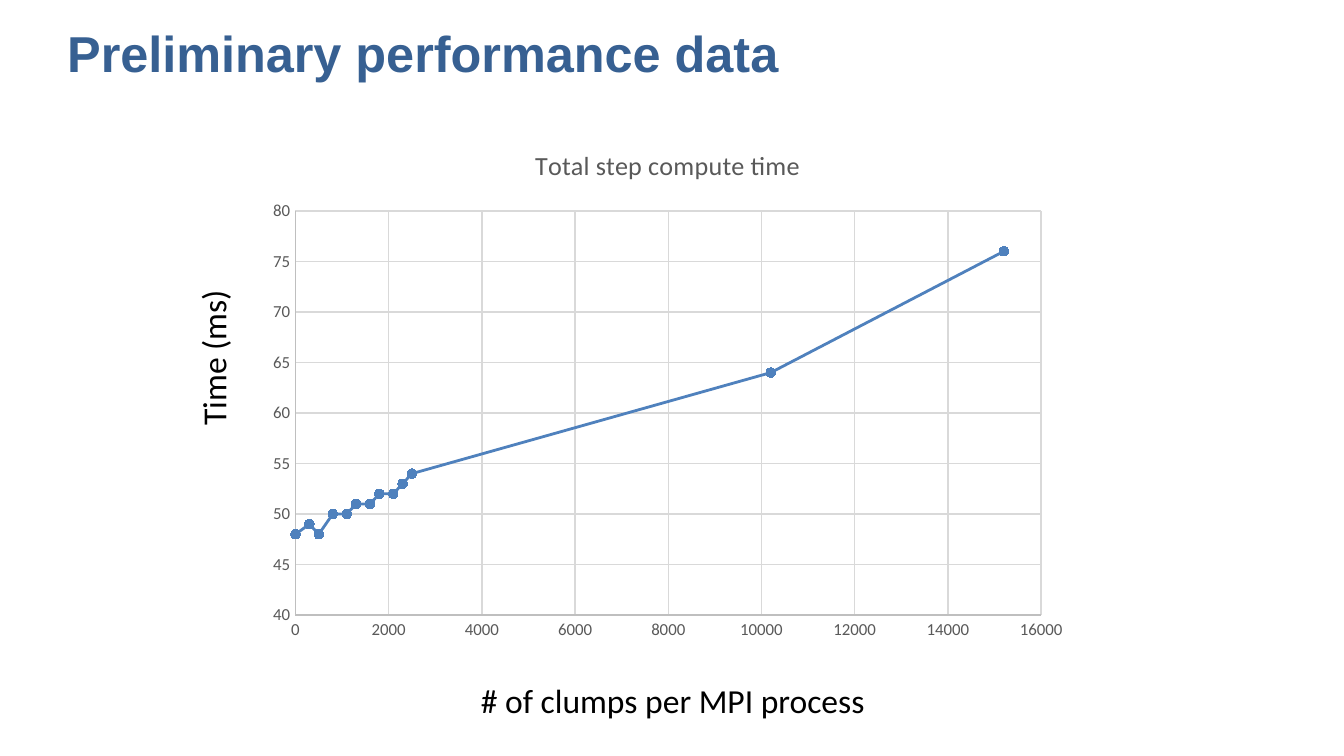
from dataclasses import dataclass

from pptx import Presentation
from pptx import util as u
from pptx.chart.data import XyChartData
from pptx.dml.color import RGBColor
from pptx.enum import chart as ch, text

Pt = u.Pt


@dataclass(frozen=True)
class Theme:
    heading_font: str = "Arial"
    body_font: str = "Calibri"
    heading: str = "376092"
    ink: str = "000000"
    muted: str = "595959"
    axis: str = "BFBFBF"
    grid: str = "D9D9D9"
    accent: str = "4F81BD"
    heading_size: float = 27
    label_size: float = 18
    chart_title_size: float = 14
    tick_size: float = 9


THEME = Theme()
CLUMPS = [0, 300, 500, 800, 1100, 1300, 1600, 1800, 2100, 2300, 2500, 10200, 15200]
TIMES = [48, 49, 48, 50, 50, 51, 51, 52, 52, 53, 54, 64, 76]


def style_font(font, name, size, color, bold=False):
    font.name, font.size, font.bold = name, Pt(size), bold
    font.color.rgb = RGBColor.from_string(color)


def style_line(line, color, width):
    line.color.rgb = RGBColor.from_string(color)
    line.width = Pt(width)


def add_title(s, words):
    sp = s.shapes.title
    sp.left, sp.top, sp.width, sp.height = Pt(36), Pt(16.5), Pt(648), Pt(28)
    tf = sp.text_frame
    tf.margin_left = tf.margin_top = tf.margin_right = tf.margin_bottom = 0
    tf.vertical_anchor = text.MSO_ANCHOR.BOTTOM
    tf.auto_size = text.MSO_AUTO_SIZE.NONE
    p = tf.paragraphs[0]
    p.alignment = text.PP_ALIGN.LEFT
    r = p.add_run()
    r.text = words
    style_font(r.font, THEME.heading_font, THEME.heading_size, THEME.heading, True)


def add_label(s, words, left, top, width, height, rotation=0):
    sp = s.shapes.add_textbox(Pt(left), Pt(top), Pt(width), Pt(height))
    sp.rotation = rotation
    tf = sp.text_frame
    tf.word_wrap = True
    tf.auto_size = text.MSO_AUTO_SIZE.SHAPE_TO_FIT_TEXT
    r = tf.paragraphs[0].add_run()
    r.text = words
    style_font(r.font, THEME.body_font, THEME.label_size, THEME.ink)


def style_axis(axis, low, high, step):
    axis.minimum_scale, axis.maximum_scale, axis.major_unit = low, high, step
    axis.major_tick_mark = axis.minor_tick_mark = ch.XL_TICK_MARK.NONE
    axis.has_major_gridlines = True
    style_line(axis.major_gridlines.format.line, THEME.grid, 0.75)
    style_line(axis.format.line, THEME.axis, 0.75)
    style_font(axis.tick_labels.font, THEME.body_font, THEME.tick_size, THEME.muted)


def add_scatter(s, title, left, top, width, height):
    data = XyChartData()
    points = data.add_series("Series 1")
    for x, y in zip(CLUMPS, TIMES):
        points.add_data_point(x, y)
    chart = s.shapes.add_chart(ch.XL_CHART_TYPE.XY_SCATTER_SMOOTH, Pt(left), Pt(top),
                               Pt(width), Pt(height), data).chart
    style_font(chart.font, THEME.body_font, 10, THEME.ink)
    chart.has_legend = False

    # Chart title
    chart.has_title = True
    r = chart.chart_title.text_frame.paragraphs[0].add_run()
    r.text = title
    style_font(r.font, THEME.body_font, THEME.chart_title_size, THEME.muted)
    chart.chart_title.include_in_layout = False

    # Axes
    style_axis(chart.category_axis, 0, 16000, 2000)
    style_axis(chart.value_axis, 40, 80, 5)

    # Curve and markers
    plot = chart.plots[0]
    plot.vary_by_categories = False
    series = plot.series[0]
    series.smooth = True
    style_line(series.format.line, THEME.accent, 1.5)
    marker = series.marker
    marker.style, marker.size = ch.XL_MARKER_STYLE.CIRCLE, 5
    marker.format.fill.solid()
    marker.format.fill.fore_color.rgb = RGBColor.from_string(THEME.accent)
    style_line(marker.format.line, THEME.accent, 0.75)


def main():
    prs = Presentation()
    prs.slide_width, prs.slide_height = Pt(720), Pt(405)
    s = prs.slides.add_slide(prs.slide_layouts[5])

    add_title(s, "Preliminary performance data")
    add_scatter(s, "Total step compute time", 137.5, 67, 440.5, 281.5)

    # Axis captions
    add_label(s, "Time (ms)", 62.5, 169, 103.5, 29, rotation=270)
    add_label(s, "# of clumps per MPI process", 250.5, 361, 223, 30)

    prs.save("out.pptx")


if __name__ == "__main__":
    main()
